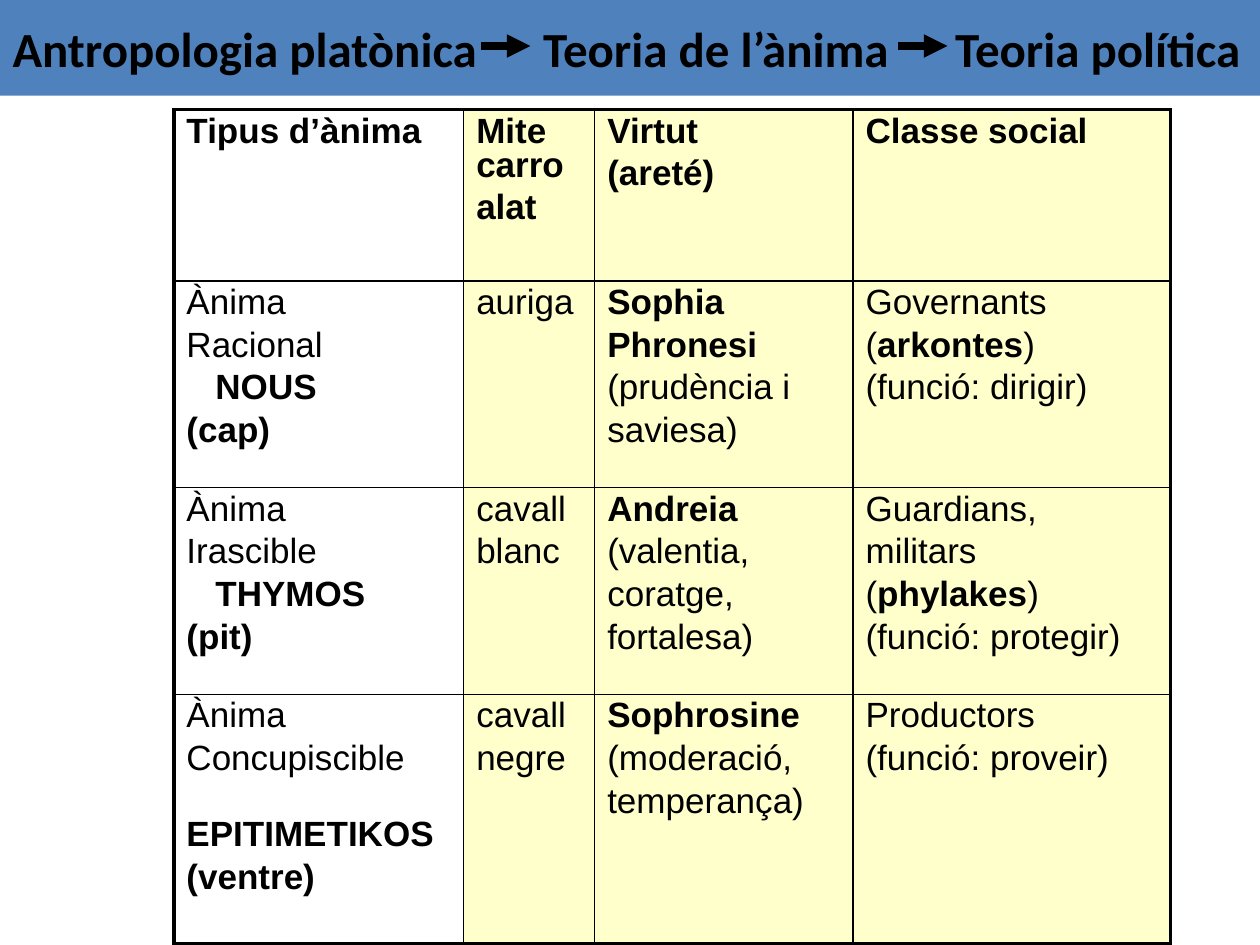
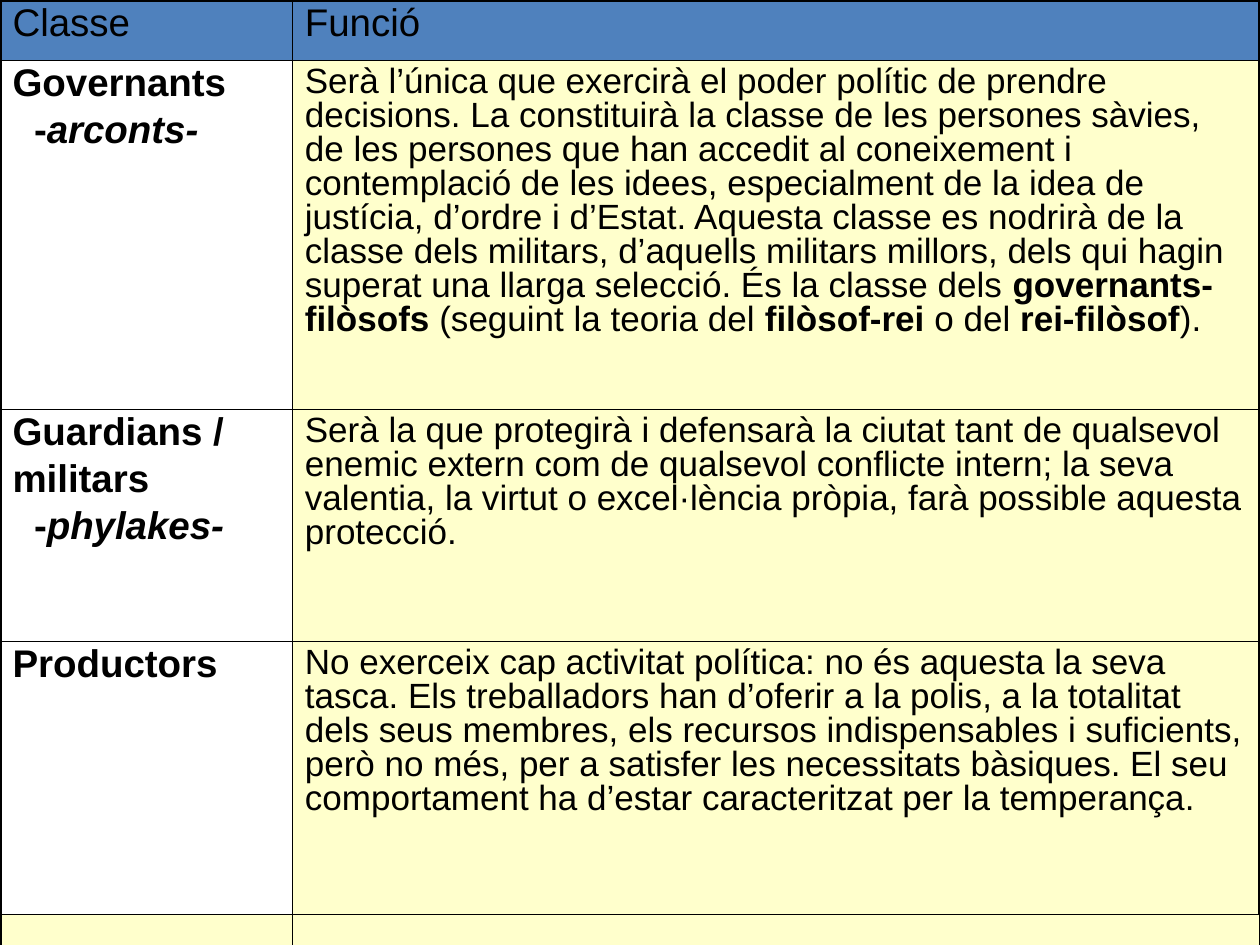
import pptx
import pptx.util
import pptx.dml.color
import pptx.enum.dml
import pptx.enum.shapes
import pptx.enum.text
import pptx.oxml
import pptx.oxml.ns
import lxml.etree

Pt = pptx.util.Pt
qn = pptx.oxml.ns.qn

COLORS = {"band": "4F81BD", "cream": "FFFFCC", "white": "FFFFFF", "ink": "000000"}
WIDTH, HEIGHT = pptx.util.Inches(10), pptx.util.Inches(7.5)
OUTER, INNER = 2.15, 0.91

TITLE_PARTS = ["Antropologia platònica", "Teoria de l’ànima", "Teoria política"]
TITLE_TABS = [42.1, 74.8]
TITLE_ARROWS = [38.2, 71.3]
ARROW_LENGTH = 3.9

# Markup: * toggles bold, _ toggles italic, > indents, ^ leaves a line above.
SOUL_ROWS = [
    [["*Tipus d’ànima"], ["*Mite carro", "*alat"], ["*Virtut", "*(areté)"],
     ["*Classe social"]],
    [["Ànima", "Racional", ">*NOUS", "*(cap)"], ["auriga"],
     ["*Sophia", "*Phronesi", "(prudència i", "saviesa)"],
     ["Governants", "(*arkontes*)", "(funció: dirigir)"]],
    [["Ànima", "Irascible", ">*THYMOS", "*(pit)"], ["cavall", "blanc"],
     ["*Andreia", "(valentia,", "coratge,", "fortalesa)"],
     ["Guardians,", "militars", "(*phylakes*)", "(funció: protegir)"]],
    [["Ànima", "Concupiscible", "^*EPITIMETIKOS", "*(ventre)"], ["cavall", "negre"],
     ["*Sophrosine", "(moderació,", "temperança)"],
     ["Productors", "(funció: proveir)"]],
]

CLASS_ROWS = [
    [["Classe"], ["Funció"]],
    [["*Governants", ">*-_arconts-"],
     ["Serà l’única que exercirà el poder polític de prendre decisions. "
      "La constituirà la classe de les persones sàvies, de les persones que han accedit "
      "al coneixement i contemplació de les idees, especialment de la idea de justícia, "
      "d’ordre i d’Estat. Aquesta classe es nodrirà de la classe dels militars, "
      "d’aquells militars millors, dels qui hagin superat una llarga selecció. "
      "És la classe dels *governants-filòsofs* (seguint la teoria del *filòsof-rei *"
      "o del *rei-filòsof*)."]],
    [["*Guardians /", "*militars", ">*-_phylakes-"],
     ["Serà la que protegirà i defensarà la ciutat tant de qualsevol enemic extern com "
      "de qualsevol conflicte intern; la seva valentia, la virtut o excel·lència pròpia, "
      "farà possible aquesta protecció."]],
    [["*Productors"],
     ["No exerceix cap activitat política: no és aquesta la seva tasca. "
      "Els treballadors han d’oferir a la polis, a la totalitat dels seus membres, "
      "els recursos indispensables i suficients, però no més, per a satisfer les "
      "necessitats bàsiques. El seu comportament ha d’estar caracteritzat per la "
      "temperança."]],
    [[], []],
]


def x(share):
    return round(WIDTH * share / 100)


def y(share):
    return round(HEIGHT * share / 100)


def rgb(name):
    return pptx.dml.color.RGBColor.from_string(COLORS[name])


def paint(fill, name):
    fill.solid()
    fill.fore_color.rgb = rgb(name)


def style(obj, values):
    for name, value in values.items():
        setattr(obj, name, value)


def add_run(p, text, size, font="Arial", bold=False, italic=False):
    r = p.add_run()
    r.text = text
    style(r.font, {"name": font, "size": Pt(size), "bold": bold, "italic": italic})
    r.font.color.rgb = rgb("ink")


def add_marked_runs(p, text, size):
    bold = italic = False
    for i, bold_part in enumerate(text.split("*")):
        bold = i % 2 == 1
        for j, part in enumerate(bold_part.split("_")):
            italic = j % 2 == 1
            if part:
                add_run(p, part, size, bold=bold, italic=italic)


def write_cell(cell, lines, size):
    tf = cell.text_frame
    for i, line in enumerate(lines):
        p = tf.paragraphs[0] if i == 0 else tf.add_paragraph()
        gap = size / 4 + (19 if line.startswith("^") else 0)
        style(p, {"line_spacing": 0.87, "space_before": Pt(gap)})
        if line.startswith(">"):
            pPr = p._p.get_or_add_pPr()
            pPr.set("marL", str(x(2.3 if size == 20 else 1.7)))
            pPr.set("indent", "0")
        add_marked_runs(p, line.lstrip(">^"), size)


def set_borders(cell, widths):
    tcPr = cell._tc.get_or_add_tcPr()
    for side, width in zip("LRTB", widths):
        ln = lxml.etree.SubElement(tcPr, qn(f"a:ln{side}"), w=str(Pt(width)))
        fill = lxml.etree.SubElement(ln, qn("a:solidFill"))
        lxml.etree.SubElement(fill, qn("a:srgbClr"), val=COLORS["ink"])


def add_grid(slide, left, top, cols, rows, texts, size_of, fill_of):
    frame = slide.shapes.add_table(len(rows), len(cols), x(left), y(top),
                                   x(sum(cols)), y(sum(rows)))
    table = frame.table
    style(table, {"first_row": False, "horz_banding": False})
    for col, share in zip(table.columns, cols):
        col.width = x(share)
    for row, share in zip(table.rows, rows):
        row.height = y(share)
    for i, row in enumerate(texts):
        for j, lines in enumerate(row):
            cell = table.cell(i, j)
            edges = [j == 0, j == len(cols) - 1, i == 0, i == len(rows) - 1]
            set_borders(cell, [OUTER if edge else INNER for edge in edges])
            paint(cell.fill, fill_of(i, j))
            write_cell(cell, lines, size_of(i, j))
    return table


def add_line(slide, start, end, width, arrow=False):
    line = slide.shapes.add_connector(pptx.enum.shapes.MSO_CONNECTOR.STRAIGHT,
                                      x(start[0]), y(start[1]), x(end[0]), y(end[1]))
    line.line.width = Pt(width)
    line.line.color.rgb = rgb("ink")
    if arrow:
        lxml.etree.SubElement(line.line._get_or_add_ln(), qn("a:tailEnd"), type="triangle")
    lxml.etree.SubElement(line._element.spPr, qn("a:effectLst"))


def add_title_band(slide, height):
    sp = slide.shapes.title
    style(sp, {"left": 0, "top": 0, "width": WIDTH, "height": y(height)})
    paint(sp.fill, "band")
    tf = sp.text_frame
    style(tf, {"word_wrap": True, "auto_size": pptx.enum.text.MSO_AUTO_SIZE.NONE,
               "vertical_anchor": pptx.enum.text.MSO_ANCHOR.MIDDLE})
    p = tf.paragraphs[0]
    p.alignment = pptx.enum.text.PP_ALIGN.LEFT
    tabs = lxml.etree.SubElement(p._p.get_or_add_pPr(), qn("a:tabLst"))
    for tab in TITLE_TABS:
        lxml.etree.SubElement(tabs, qn("a:tab"), pos=str(x(tab)), algn="l")
    add_run(p, "\t".join(TITLE_PARTS), 28, font="Calibri", bold=True)


def build_soul_slide(prs):
    slide = prs.slides.add_slide(prs.slide_layouts[5])
    add_title_band(slide, 10.13)
    add_grid(slide, 13.8, 11.6, [23, 10.4, 20.5, 25.2], [18.13, 21.87, 21.87, 26.4],
             SOUL_ROWS, lambda i, j: 20, lambda i, j: "cream" if j else "white")
    for start in TITLE_ARROWS:
        add_line(slide, (start, 4.87), (start + ARROW_LENGTH, 4.87), 4.5, arrow=True)


def class_fill(i, j):
    if i == 0:
        return "band"
    return "cream" if j or i == len(CLASS_ROWS) - 1 else "white"


def build_class_slide(prs):
    slide = prs.slides.add_slide(prs.slide_layouts[6])
    table = add_grid(slide, 0, 0, [23.2, 76.8], [6.4, 36.93, 24.53, 28.93, 6.4],
                     CLASS_ROWS, lambda i, j: 20 if i and j else 22, class_fill)
    last = len(CLASS_ROWS) - 1
    table.cell(last, 0).merge(table.cell(last, 1))
    add_line(slide, (23.2, 94.1), (23.2, 103.6), 0.75)


def main():
    prs = pptx.Presentation()
    style(prs, {"slide_width": WIDTH, "slide_height": HEIGHT})
    build_soul_slide(prs)
    build_class_slide(prs)
    prs.save("out.pptx")


if __name__ == "__main__":
    main()
